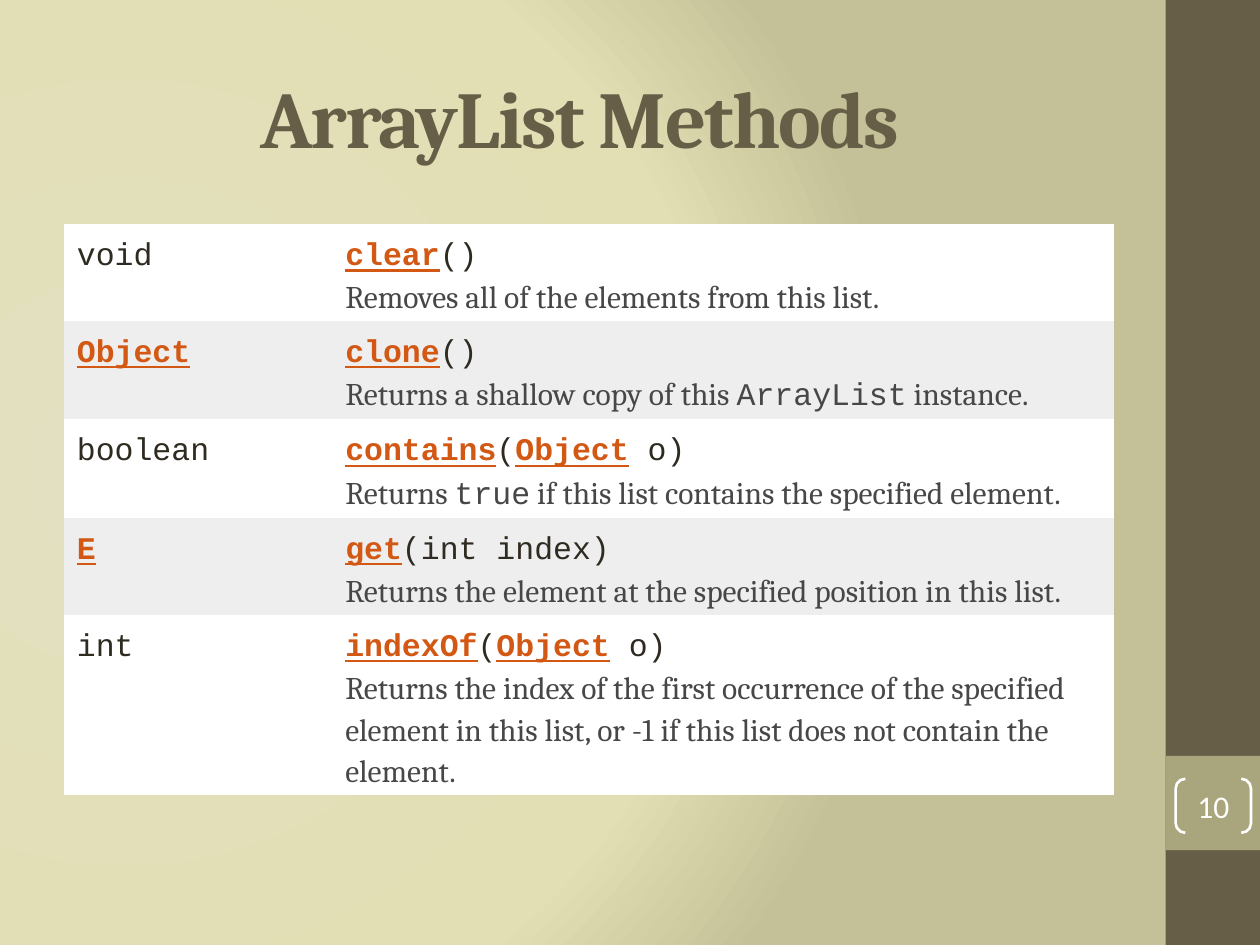
from pptx import Presentation
from pptx.dml.color import RGBColor
from pptx.enum.shapes import MSO_SHAPE
from pptx.enum.text import MSO_ANCHOR, PP_ALIGN
from pptx.oxml import parse_xml
from pptx.oxml.ns import nsdecls
from pptx.util import Cm, Pt

BROWN = RGBColor(0x67, 0x5E, 0x47)
OLIVE = RGBColor(0xA9, 0xA5, 0x7C)
WHITE = RGBColor(0xFF, 0xFF, 0xFF)
SILVER = RGBColor(0xEE, 0xEE, 0xEF)
DARK = RGBColor(0x2F, 0x2B, 0x20)
GREY = RGBColor(0x47, 0x47, 0x47)
ORANGE = RGBColor(0xD2, 0x58, 0x14)

CODE = dict(font="Courier New", color=DARK)
LINK = dict(font="Courier New", color=ORANGE, bold=True, line=True)
NOTE = dict(font="Cambria", color=GREY)
TERM = dict(font="Courier New", color=GREY)


def write(para, text, font, color, size=18, bold=False, line=False):
    run = para.add_run()
    run.text = text
    run.font.name = font
    run.font.size = Pt(size)
    run.font.bold = bold
    run.font.underline = line
    run.font.color.rgb = color
    return run


def block(kind, left, top, width, height, fill=None):
    shape = slide.shapes.add_shape(kind, Cm(left), Cm(top), Cm(width), Cm(height))
    shape.shadow.inherit = False
    if fill is None:
        shape.fill.background()
    else:
        shape.fill.solid()
        shape.fill.fore_color.rgb = fill
    shape.line.fill.background()
    return shape


deck = Presentation()
deck.slide_width, deck.slide_height = Cm(25.4), Cm(19.05)
slide = deck.slides.add_slide(deck.slide_layouts[5])

stops = "".join(
    f'<a:gs pos="{pos}"><a:srgbClr val="{tone}"/></a:gs>'
    for pos, tone in [(0, "E2E0C0"), (75000, "E2DFB4"), (100000, "C4C198")]
)
slide.element.cSld.insert(0, parse_xml(
    f'<p:bg {nsdecls("p", "a")}><p:bgPr><a:gradFill rotWithShape="1">'
    f'<a:gsLst>{stops}</a:gsLst><a:path path="circle">'
    '<a:fillToRect l="20000" t="50000" r="100000" b="50000"/></a:path>'
    '</a:gradFill><a:effectLst/></p:bgPr></p:bg>'
))

block(MSO_SHAPE.RECTANGLE, 23.5, 0, 1.9, 19.05, BROWN)
block(MSO_SHAPE.RECTANGLE, 23.5, 15.24, 1.9, 1.9, OLIVE)

title = slide.shapes.title
title.left, title.top, title.width, title.height = Cm(1.27), Cm(0.76), Cm(21.16), Cm(3.18)
title.text_frame.vertical_anchor = MSO_ANCHOR.MIDDLE
para = title.text_frame.paragraphs[0]
para.alignment = PP_ALIGN.CENTER
run = write(para, "ArrayList Methods ", "Cambria", BROWN, size=46, bold=True)
run.font._element.set("spc", "-100")

rows = [
    ([("void", CODE)],
     [("clear", LINK), ("()", CODE)],
     [("Removes all of the elements from this list.", NOTE)]),
    ([("Object", LINK)],
     [("clone", LINK), ("()", CODE)],
     [("Returns a shallow copy of this ", NOTE), ("ArrayList", TERM), (" instance.", NOTE)]),
    ([("boolean", CODE)],
     [("contains", LINK), ("(", CODE), ("Object", LINK), (" o)", CODE)],
     [("Returns ", NOTE), ("true", TERM),
      (" if this list contains the specified element.", NOTE)]),
    ([("E", LINK)],
     [("get", LINK), ("(int index)", CODE)],
     [("Returns the element at the specified position in this list.", NOTE)]),
    ([("int", CODE)],
     [("indexOf", LINK), ("(", CODE), ("Object", LINK), (" o)", CODE)],
     [("Returns the index of the first occurrence of the specified element in this list, "
       "or -1 if this list does not contain the element.", NOTE)]),
]
frame = slide.shapes.add_table(len(rows), 2, Cm(1.3), Cm(4.52), Cm(21.16), Cm(9.5))
table = frame.table
table.first_row = table.horz_banding = False
style = table._tbl.tblPr.find("{*}tableStyleId")
style.text = "{2D5ABB26-0587-4C30-8999-92F81FD0307C}"
table.columns[0].width, table.columns[1].width = Cm(5.41), Cm(15.75)

for r, (kind, call, note) in enumerate(rows):
    table.rows[r].height = Cm(1.9)
    for c, lines in enumerate([[kind], [call, note]]):
        cell = table.cell(r, c)
        cell.fill.solid()
        cell.fill.fore_color.rgb = SILVER if r % 2 else WHITE
        cell.margin_left, cell.margin_top = Cm(0.25), Cm(0.2)
        cell.margin_right, cell.margin_bottom = Cm(0), Cm(0.08)
        for n, parts in enumerate(lines):
            para = cell.text_frame.add_paragraph() if n else cell.text_frame.paragraphs[0]
            para.line_spacing = 1.15
            if n:
                para.space_after = Pt(1.5)
            for text, look in parts:
                write(para, text, **look)

badge = block(MSO_SHAPE.DOUBLE_BRACKET, 23.7, 15.7, 1.52, 1.09)
badge.adjustments[0] = 0.18
badge.line.color.rgb = WHITE
badge.line.width = Pt(1.5)
text = badge.text_frame
text.margin_left = text.margin_right = text.margin_top = text.margin_bottom = 0
text.vertical_anchor = MSO_ANCHOR.MIDDLE
text.paragraphs[0].alignment = PP_ALIGN.CENTER
write(text.paragraphs[0], "10", "Calibri", WHITE)

deck.save("out.pptx")
